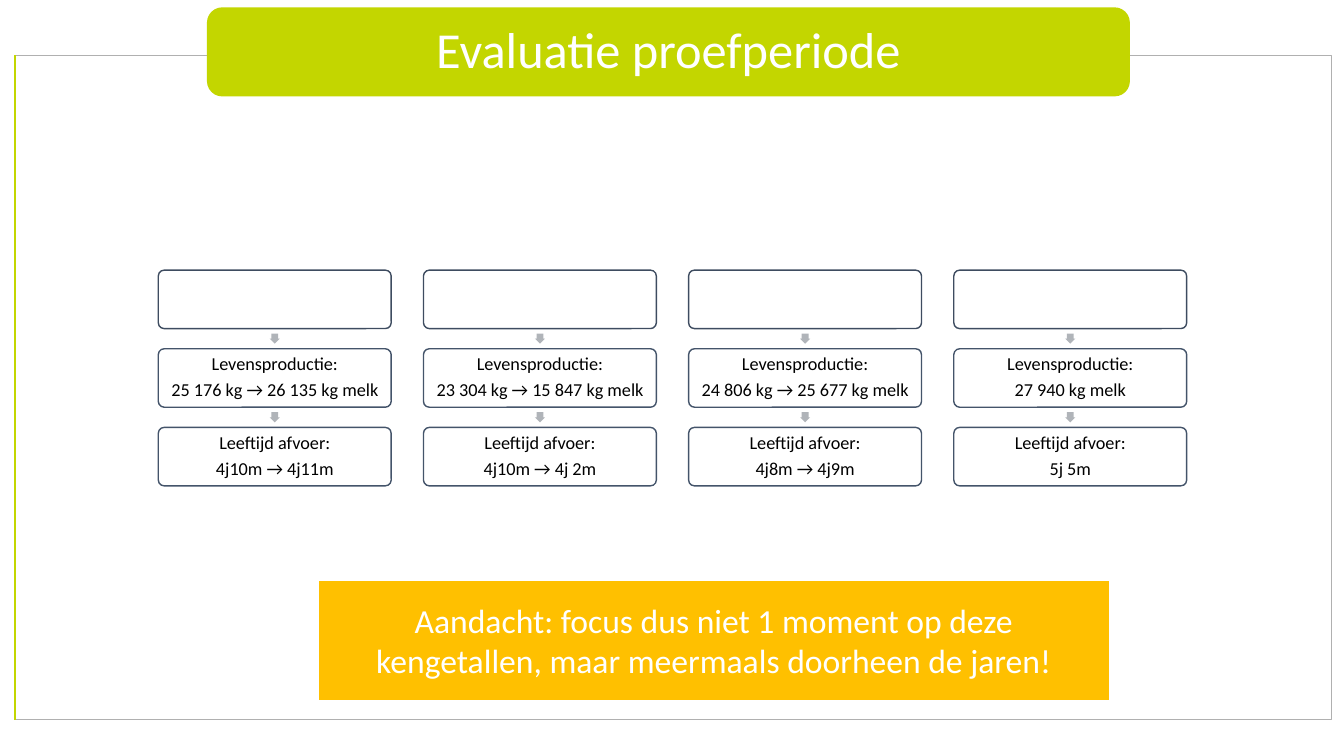
from lxml import etree
from pptx import Presentation, util as u
from pptx.dml.color import RGBColor
from pptx.enum import shapes, text
from pptx.oxml.ns import qn

TITLE = "Evaluatie proefperiode"
WARNING = ("Aandacht: focus dus niet 1 moment op deze kengetallen, "
           "maar meermaals doorheen de jaren!")
PRODUCTION, AGE = "Levensproductie:", "Leeftijd afvoer:"
# One entry per farm: lifetime production, age at removal
FARMS = [
    ("25 176 kg → 26 135 kg melk", "4j10m → 4j11m"),
    ("23 304 kg → 15 847 kg melk", "4j10m → 4j 2m"),
    ("24 806 kg → 25 677 kg melk", "4j8m → 4j9m"),
    ("27 940 kg melk", "5j 5m"),
]
COLORS = {"lime": "C3D600", "frame": "B0B0B0", "white": "FFFFFF",
          "black": "000000", "header": "3E4C60", "box": "44546A",
          "arrow": "B0B4B9", "amber": "FFC000"}
FONT = "Calibri"

# Grid in inches
GRID_LEFT, GRID_TOP = 1.57, 2.68
COLUMN_STEP, ROW_STEP = 2.63, 0.78
BOX_WIDTH, BOX_HEIGHT = 2.31, 0.58
ARROW = 0.1
FRAME_LEFT, FRAME_TOP, FRAME_WIDTH, FRAME_HEIGHT = 0.15, 0.55, 13.06, 6.59

presentation = Presentation()
presentation.slide_width, presentation.slide_height = u.Inches(13.33), u.Inches(7.5)
slide = presentation.slides.add_slide(presentation.slide_layouts[6])


def rgb(name):
    return RGBColor.from_string(COLORS[name])


def add_shape(kind, left, top, width, height, fill=None, line=None, weight=1):
    shape = slide.shapes.add_shape(
        kind, *(u.Inches(v) for v in (left, top, width, height)))
    shape.shadow.inherit = False
    if fill:
        shape.fill.solid()
        shape.fill.fore_color.rgb = rgb(fill)
    else:
        shape.fill.background()
    if line:
        shape.line.color.rgb = rgb(line)
        shape.line.width = u.Pt(weight)
    else:
        shape.line.fill.background()
    return shape


def write(shape, lines, size, color, spacing=None, after=0, margins=(0.1, 0.05)):
    frame = shape.text_frame
    frame.word_wrap = True
    frame.vertical_anchor = text.MSO_ANCHOR.MIDDLE
    frame.margin_left = frame.margin_right = u.Inches(margins[0])
    frame.margin_top = frame.margin_bottom = u.Inches(margins[1])
    frame.text = "\n".join(lines)
    for paragraph in frame.paragraphs:
        paragraph.alignment = text.PP_ALIGN.CENTER
        paragraph.line_spacing = spacing
        for run in paragraph.runs:
            run.font.name = FONT
            run.font.size = u.Pt(size)
            run.font.color.rgb = rgb(color)
    for paragraph in frame.paragraphs[:-1]:
        paragraph.space_after = u.Pt(after)


# Frame with a lime left edge
add_shape(shapes.MSO_SHAPE.RECTANGLE, FRAME_LEFT, FRAME_TOP, FRAME_WIDTH,
          FRAME_HEIGHT, line="frame", weight=0.5)
edge = slide.shapes.add_connector(
    shapes.MSO_CONNECTOR.STRAIGHT, u.Inches(FRAME_LEFT), u.Inches(FRAME_TOP),
    u.Inches(FRAME_LEFT), u.Inches(FRAME_TOP + FRAME_HEIGHT))
edge.line.color.rgb = rgb("lime")
edge.line.width = u.Pt(1)
etree.SubElement(edge._element.spPr, qn("a:effectLst"))

# Title
title = add_shape(shapes.MSO_SHAPE.ROUNDED_RECTANGLE, 2.06, 0.08, 9.14, 0.87,
                  "lime", "lime")
write(title, [TITLE], 36, "white", spacing=0.9, margins=(0.35, 0))

# Columns: an empty header box, then two boxes each reached by an arrow
for column, (production, age) in enumerate(FARMS):
    left = GRID_LEFT + column * COLUMN_STEP
    rows = [[], [PRODUCTION, production], [AGE, age]]
    for row, lines in enumerate(rows):
        top = GRID_TOP + row * ROW_STEP
        if row:
            gap = ROW_STEP - BOX_HEIGHT
            arrow = add_shape(shapes.MSO_SHAPE.RIGHT_ARROW,
                              left + (BOX_WIDTH - ARROW) / 2,
                              top - (gap + ARROW) / 2, ARROW, ARROW, "arrow")
            arrow.rotation = 90
            arrow.adjustments[0] = 0.67
        box = add_shape(shapes.MSO_SHAPE.ROUNDED_RECTANGLE, left, top, BOX_WIDTH,
                        BOX_HEIGHT, "white", "box" if row else "header")
        box.adjustments[0] = 0.1
        if lines:
            write(box, lines, 13, "black", spacing=0.9, after=4.5,
                  margins=(0.04, 0.04))

# Warning
warning = add_shape(shapes.MSO_SHAPE.FLOWCHART_PROCESS, 3.16, 5.76, 7.84, 1.18,
                    "amber")
write(warning, [WARNING], 24, "white")

presentation.save("out.pptx")
